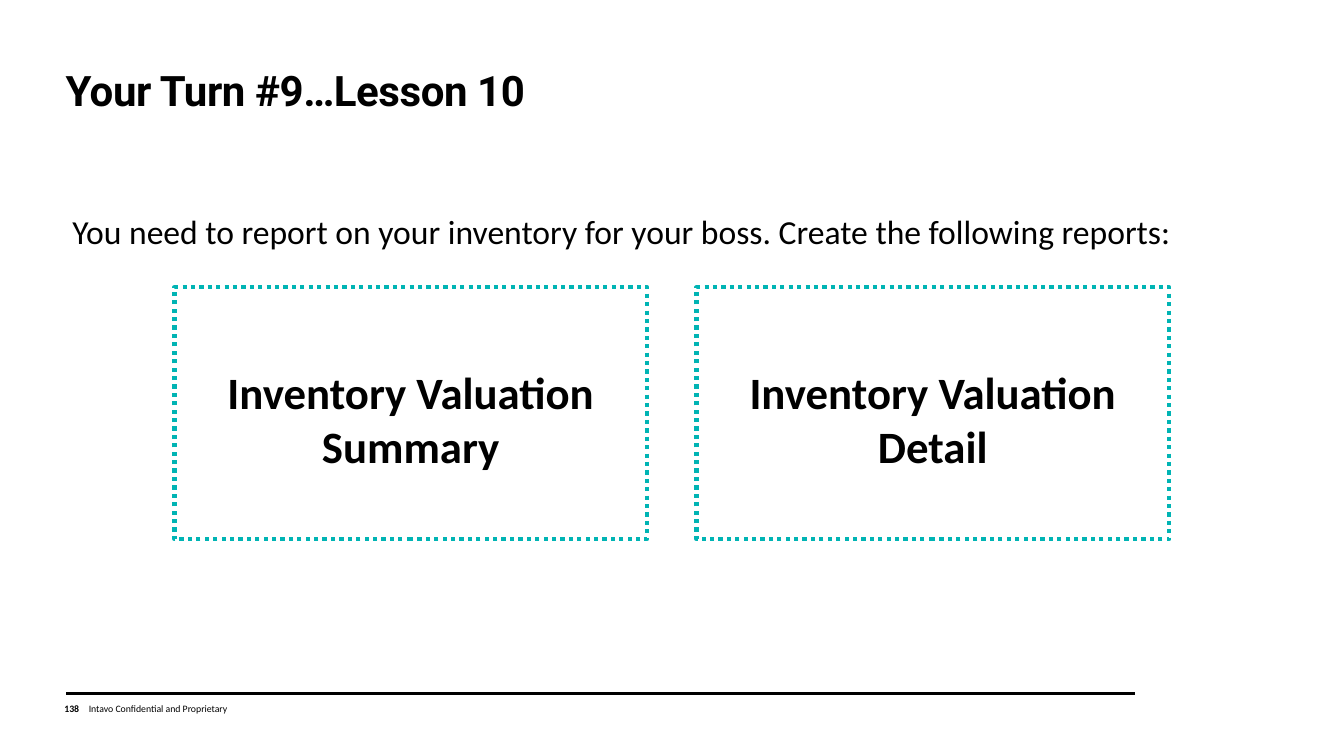
from pptx import Presentation
from pptx.dml.color import RGBColor as Rgb
from pptx.enum.dml import MSO_LINE as Dash
from pptx.enum.shapes import MSO_CONNECTOR as Conn, MSO_SHAPE as Form
from pptx.enum.text import MSO_ANCHOR as Anchor, MSO_AUTO_SIZE as Fit, PP_ALIGN as Align
from pptx.oxml.ns import qn
from pptx.util import Pt

BLACK, WHITE, TEAL = "000000", "FFFFFF", "00B4B4"


def color(code):
    return Rgb.from_string(code)


def place(shape, box):
    shape.left, shape.top, shape.width, shape.height = map(Pt, box)


def write(shape, text, size=24, font="Calibri", bold=False, tint=BLACK,
          align=Align.LEFT, anchor=Anchor.TOP, pad=(7.2, 3.6), fit=Fit.NONE):
    """Fill a shape with one formatted paragraph and return it."""
    frame = shape.text_frame
    frame.text = text
    frame.word_wrap = True
    frame.auto_size = fit
    frame.vertical_anchor = anchor
    frame.margin_left = frame.margin_right = Pt(pad[0])
    frame.margin_top = frame.margin_bottom = Pt(pad[1])
    para = frame.paragraphs[0]
    para.alignment = align
    face = para.runs[0].font
    face.name, face.size, face.bold = font, Pt(size), bold
    face.color.rgb = color(tint)
    return para


def label(shapes, box, text, **style):
    return write(shapes.add_textbox(*map(Pt, box)), text, **style)


def header(slide, box, text):
    title = slide.shapes.title
    place(title, box)
    para = write(title, text, size=30, font="Roboto", bold=True, anchor=Anchor.BOTTOM)
    para.line_spacing = 0.95
    # Slightly tight letter spacing
    para.runs[0].font._element.set("spc", "-30")


def card(slide, box, text):
    left, top, width, height = box
    group = slide.shapes.add_group_shape().shapes
    # Dotted frame
    frame = group.add_shape(Form.RECTANGLE, *map(Pt, box))
    frame.shadow.inherit = False
    frame.fill.solid()
    frame.fill.fore_color.rgb = color(WHITE)
    frame.line.color.rgb = color(TEAL)
    frame.line.width = Pt(3)
    frame.line.dash_style = Dash.ROUND_DOT
    # Report name
    inset = 13
    label(group, (left + inset, top + 49, width - 2 * inset, 85), text,
          size=32, bold=True, align=Align.CENTER, pad=(7.2, 6.6))


def cards(slide, box, names, gap):
    left, top, width, height = box
    each = (width - gap * (len(names) - 1)) / len(names)
    for i, name in enumerate(names):
        card(slide, (left + i * (each + gap), top, each, height), name)


def footer(slide, box, number, note):
    left, top, width, height = box
    # Rule above the footer
    rule = slide.shapes.add_connector(Conn.STRAIGHT, Pt(left), Pt(top),
                                      Pt(left + width), Pt(top))
    rule.line.color.rgb = color(BLACK)
    rule.line.width = Pt(1.5)
    props = rule._element.spPr
    props.append(props.makeelement(qn("a:effectLst"), {}))
    # Page number and note
    base = top + 3.6
    label(slide.shapes, (left - 8.6, base, 28, height), number, size=7,
          bold=True, anchor=Anchor.MIDDLE)
    label(slide.shapes, (left + 15.9, base, 192, height), note, size=7,
          anchor=Anchor.MIDDLE, pad=(0, 3.6))


def main():
    deck = Presentation()
    deck.slide_width, deck.slide_height = Pt(960), Pt(540)
    slide = deck.slides.add_slide(deck.slide_layouts[5])

    footer(slide, (47.5, 495.4, 763.2, 14.4), "138",
           "Intavo Confidential and Proprietary")
    label(slide.shapes, (44.6, 146.9, 869.8, 36),
          "You need to report on your inventory for your boss. "
          "Create the following reports:", fit=Fit.SHAPE_TO_FIT_TEXT)
    header(slide, (39.6, 43.2, 874.8, 43.2), "Your Turn #9…Lesson 10")
    cards(slide, (124.6, 205.2, 710.6, 180),
          ["Inventory Valuation Summary", "Inventory Valuation Detail"], gap=35.2)

    deck.save("out.pptx")


if __name__ == "__main__":
    main()
